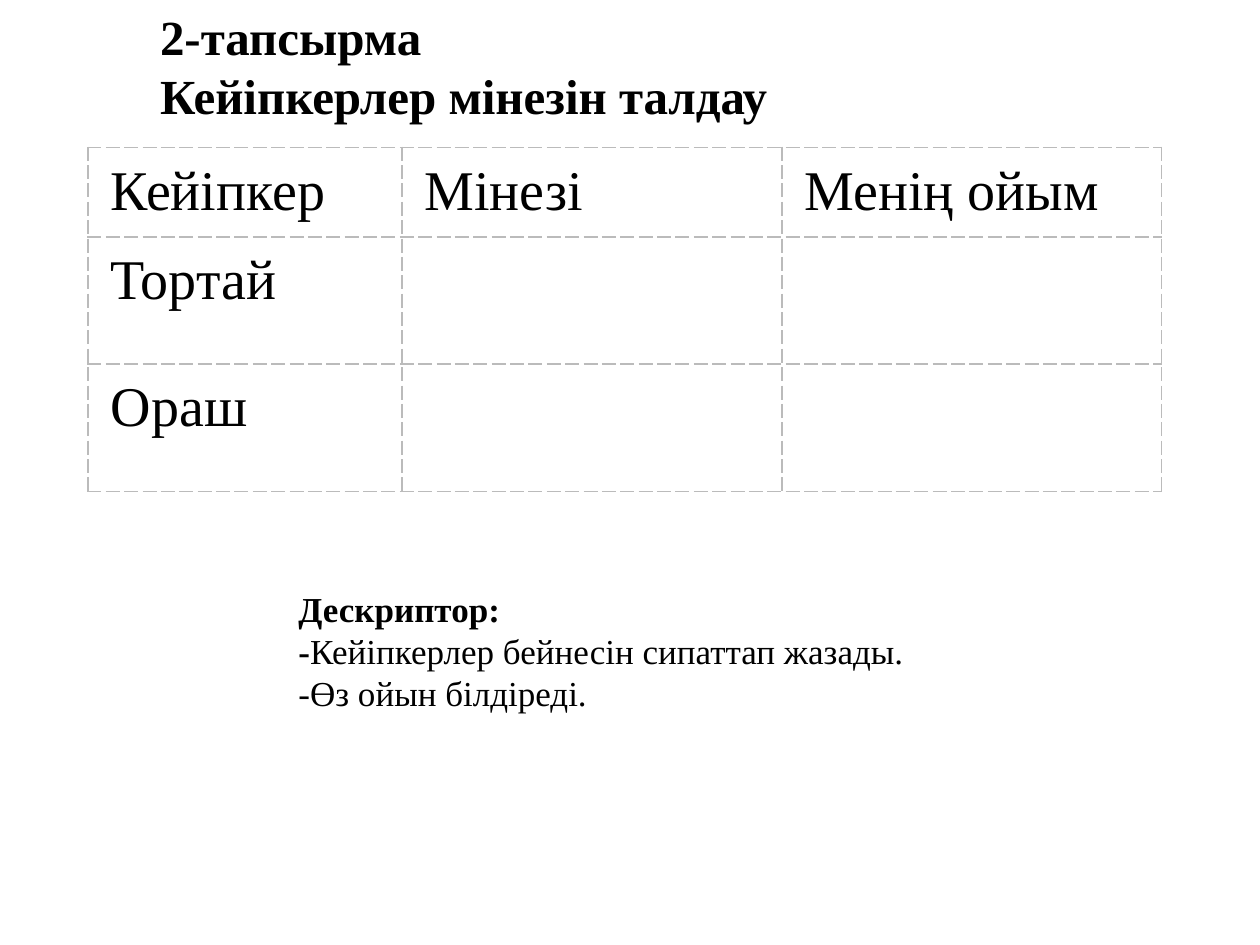
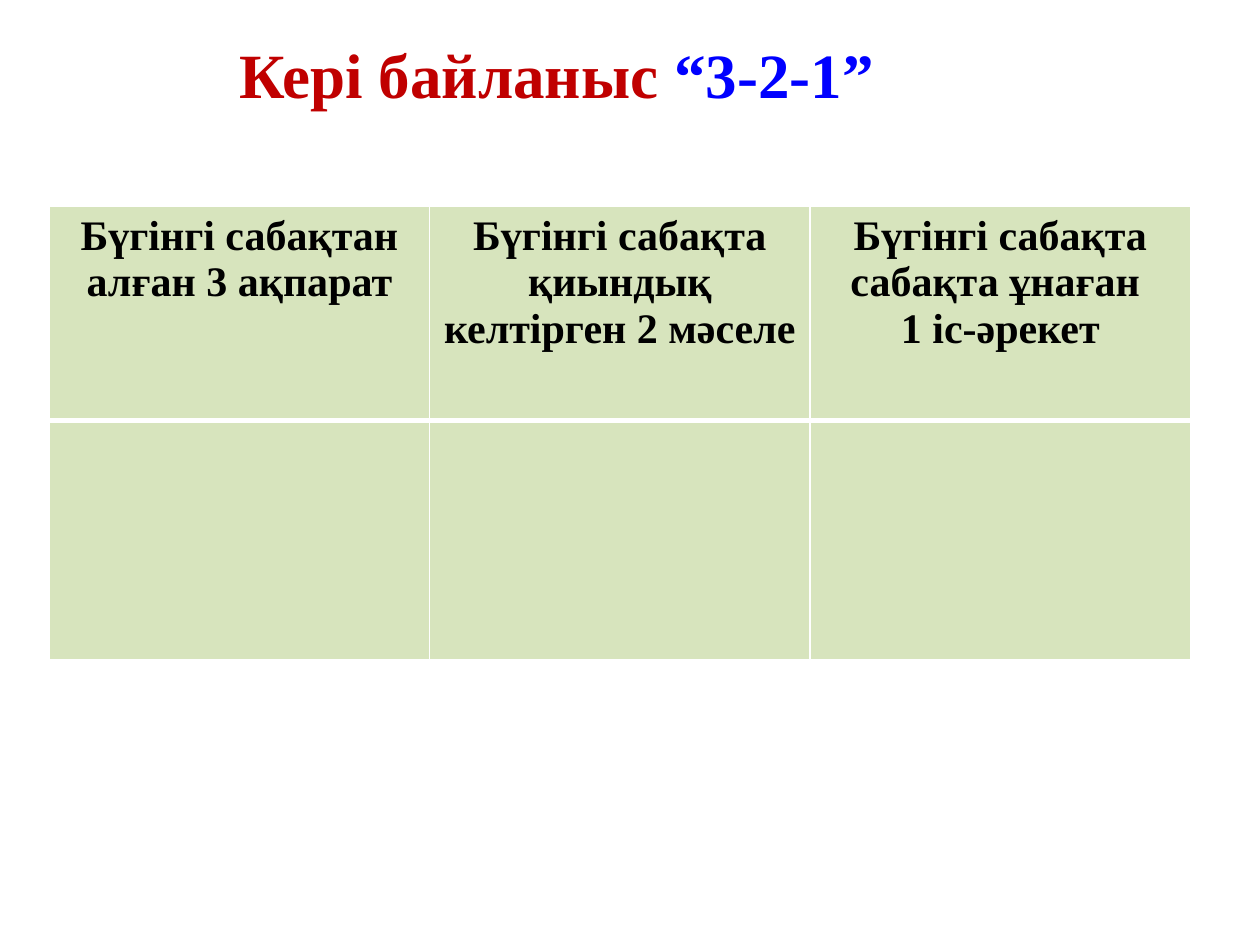
from dataclasses import dataclass
from itertools import product

from lxml import etree
from pptx import Presentation, util as u
from pptx.dml.color import RGBColor
from pptx.enum import text as t
from pptx.oxml import ns


@dataclass(frozen=True)
class Theme:
    """Hold the colours and type sizes of the deck."""
    face: str = "Times New Roman"
    ink: str = "000000"
    paper: str = "FFFFFF"
    red: str = "C00000"
    blue: str = "0000FF"
    green: str = "D7E4BD"
    grey: str = "BBBBBB"
    note: int = 20
    head: int = 24
    task: int = 28
    cell: int = 32
    main: int = 36


LOOK = Theme()
WIDE, HIGH = u.Inches(10), u.Inches(7.5)
SIDES = ("L", "R", "T", "B")


def across(part):
    """Turn a percentage of the slide's width into a length."""
    return round(WIDE * part / 100)


def down(part):
    """Turn a percentage of the slide's height into a length."""
    return round(HIGH * part / 100)


def span(left, top, width, height):
    """Turn four percentages into a place and size."""
    return across(left), down(top), across(width), down(height)


def apply(item, form):
    """Set each attribute named in a dict."""
    for name, value in form.items():
        setattr(item, name, value)


def write(frame, lines, size, align=t.PP_ALIGN.LEFT):
    """Fill a frame with lines, each a list of (text, bold, colour) runs."""
    for i, line in enumerate(lines):
        para = frame.add_paragraph() if i else frame.paragraphs[0]
        para.alignment = align
        for words, bold, tint in line:
            run = para.add_run()
            run.text = words
            apply(run.font, {"name": LOOK.face, "size": u.Pt(size), "bold": bold})
            run.font.color.rgb = RGBColor.from_string(tint)


def fit(frame):
    """Let a frame wrap and centre its text from top to bottom."""
    apply(frame, {"word_wrap": True, "auto_size": t.MSO_AUTO_SIZE.NONE,
                  "vertical_anchor": t.MSO_ANCHOR.MIDDLE})


def start(deck, place, lines, size):
    """Add a title-only slide and format its title."""
    slide = deck.slides.add_slide(deck.slide_layouts[5])
    title = slide.shapes.title
    apply(title, dict(zip(("left", "top", "width", "height"), place)))
    fit(title.text_frame)
    write(title.text_frame, lines, size)
    return slide


def note(slide, place, lines):
    """Add a wrapped text box."""
    frame = slide.shapes.add_textbox(*place).text_frame
    fit(frame)
    write(frame, lines, LOOK.note)


def edge(cell, side, tint, width, dash):
    """Draw one border of a cell."""
    line = etree.SubElement(cell._tc.get_or_add_tcPr(), ns.qn(f"a:ln{side}"),
                            w=str(u.Pt(width)))
    fill = etree.SubElement(line, ns.qn("a:solidFill"))
    etree.SubElement(fill, ns.qn("a:srgbClr"), val=tint)
    etree.SubElement(line, ns.qn("a:prstDash"), val=dash)


def grid(slide, left, top, cols, rows, fill, tint, dash="solid", rule=1):
    """Add a plain table; rule is the width of the line under its header."""
    place = span(left, top, sum(cols), sum(rows))
    table = slide.shapes.add_table(len(rows), len(cols), *place).table
    apply(table, {"first_row": False, "horz_banding": False})
    for col, part in zip(table.columns, cols):
        col.width = across(part)
    for row, part in zip(table.rows, rows):
        row.height = down(part)
    for r, c in product(range(len(rows)), range(len(cols))):
        cell = table.cell(r, c)
        for side in SIDES:
            width = rule if (r, side) in ((0, "B"), (1, "T")) else 1
            edge(cell, side, tint, width, dash)
        cell.fill.solid()
        cell.fill.fore_color.rgb = RGBColor.from_string(fill)
    return table


def traits(deck):
    """Build the slide on the characters' traits."""
    heads = ["2-тапсырма", "Кейіпкерлер мінезін талдау"]
    slide = start(deck, span(11.7, 0, 75.8, 13.87),
                  [[(head, True, LOOK.ink)] for head in heads], LOOK.task)
    table = grid(slide, 7, 15.6, [24.9, 30.15, 30.15], [9.47, 13.47, 13.47],
                 LOOK.paper, LOOK.grey, "dash")
    words = {(0, 0): "Кейіпкер", (0, 1): "Мінезі", (0, 2): "Менің ойым",
             (1, 0): "Тортай", (2, 0): "Ораш"}
    for spot, word in words.items():
        cell = table.cell(*spot)
        apply(cell, {"margin_left": u.Inches(0.18), "margin_right": u.Inches(0.1),
                     "margin_top": u.Inches(0.1), "margin_bottom": u.Inches(0.1)})
        write(cell.text_frame, [[(word, False, LOOK.ink)]], LOOK.cell)
    note(slide, span(22.7, 61.47, 50.5, 14.8), [
        [("Дескриптор:", True, LOOK.ink)],
        [("-", True, LOOK.ink),
         ("Кейіпкерлер бейнесін сипаттап жазады.", False, LOOK.ink)],
        [("-Өз ойын білдіреді.", False, LOOK.ink)]])


def review(deck):
    """Build the feedback slide."""
    slide = start(deck, span(18, 3.07, 62.5, 9.47),
                  [[("Кері байланыс ", True, LOOK.red),
                    ("“3-2-1”", True, LOOK.blue)]], LOOK.main)
    table = grid(slide, 3.9, 21.87, [30.2] * 3, [22.6, 25.4],
                 LOOK.green, LOOK.paper, rule=3)
    heads = [["Бүгінгі сабақтан алған 3 ақпарат"],
             ["Бүгінгі сабақта қиындық келтірген 2 мәселе"],
             ["Бүгінгі сабақта сабақта ұнаған ", "1 іс-әрекет"]]
    for c, lines in enumerate(heads):
        write(table.cell(0, c).text_frame,
              [[(line, True, LOOK.ink)] for line in lines],
              LOOK.head, t.PP_ALIGN.CENTER)


def main():
    """Build and save the deck."""
    deck = Presentation()
    apply(deck, {"slide_width": WIDE, "slide_height": HIGH})
    traits(deck)
    review(deck)
    deck.save("out.pptx")


if __name__ == "__main__":
    main()
